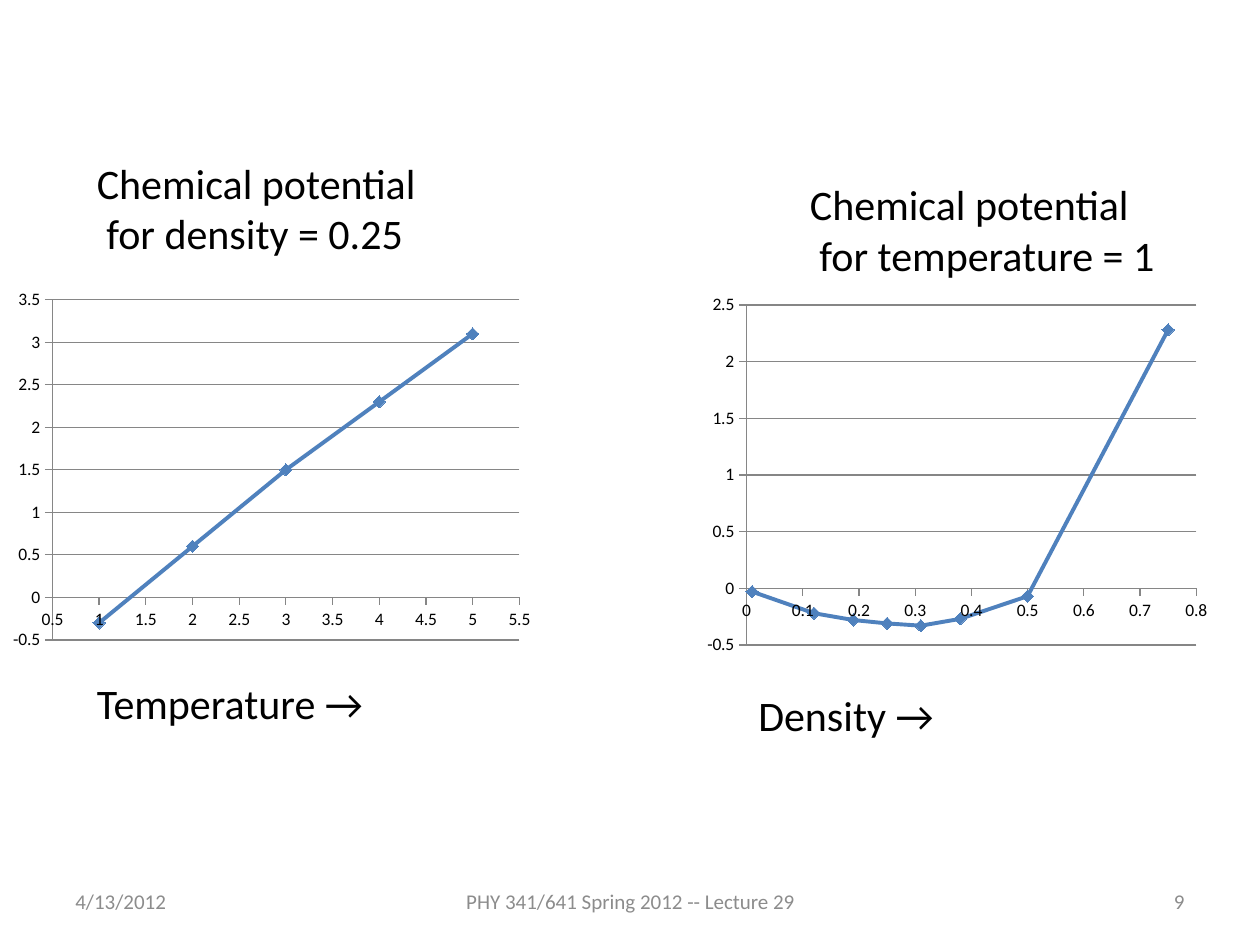
import lxml.etree
import pptx
import pptx.chart.data
import pptx.dml.color
import pptx.enum.chart
import pptx.enum.text
import pptx.oxml
import pptx.oxml.ns
import pptx.util

Inches, Pt = pptx.util.Inches, pptx.util.Pt
ALIGN = pptx.enum.text.PP_ALIGN
ANCHOR = pptx.enum.text.MSO_ANCHOR
COLORS = {"text": "000000", "footer": "8C8C8C", "series": "4F81BD", "axis": "868686"}


def rgb(name):
    return pptx.dml.color.RGBColor.from_string(COLORS[name])


class SlideBuilder:
    font = "Calibri"

    def __init__(self, slide):
        self.slide = slide

    def text(self, box, lines, size=24, color="text", align=ALIGN.LEFT, anchor=ANCHOR.TOP):
        sp = self.slide.shapes.add_textbox(*map(Inches, box))
        tf = sp.text_frame
        tf.word_wrap = True
        tf.vertical_anchor = anchor
        for i, line in enumerate(lines):
            p = tf.add_paragraph() if i else tf.paragraphs[0]
            p.alignment = align
            r = p.add_run()
            r.text = line
            r.font.name, r.font.size = self.font, Pt(size)
            r.font.color.rgb = rgb(color)

    def scatter(self, box, plot, points, x_scale, y_scale):
        """Draw a smooth scatter; each scale is (minimum, maximum, major unit)."""
        data = pptx.chart.data.XyChartData()
        series = data.add_series("Series 1")
        for x, y in points:
            series.add_data_point(x, y)
        kind = pptx.enum.chart.XL_CHART_TYPE.XY_SCATTER_SMOOTH
        chart = self.slide.shapes.add_chart(kind, *map(Inches, box), data).chart
        chart.has_legend = chart.has_title = False
        chart.font.name, chart.font.size = self.font, Pt(10)
        chart.font.color.rgb = rgb("text")
        chart.plots[0].vary_by_categories = False
        self.style_axis(chart.category_axis, x_scale, grid=False)
        self.style_axis(chart.value_axis, y_scale, grid=True)
        self.style_series(chart.plots[0].series[0])
        self.place_plot(chart, plot)

    def style_axis(self, axis, scale, grid):
        axis.minimum_scale, axis.maximum_scale, axis.major_unit = scale
        axis.major_tick_mark = pptx.enum.chart.XL_TICK_MARK.OUTSIDE
        axis.minor_tick_mark = pptx.enum.chart.XL_TICK_MARK.NONE
        axis.tick_labels.number_format = "General"
        axis.tick_labels.number_format_is_linked = False
        axis.has_major_gridlines = grid
        lines = [axis.format.line]
        if grid:
            lines.append(axis.major_gridlines.format.line)
        for line in lines:
            line.color.rgb, line.width = rgb("axis"), Pt(0.75)

    def style_series(self, series):
        series.smooth = True
        series.format.line.color.rgb = rgb("series")
        series.format.line.width = Pt(2.25)
        marker = series.marker
        marker.style = pptx.enum.chart.XL_MARKER_STYLE.DIAMOND
        marker.size = 7
        marker.format.fill.solid()
        marker.format.fill.fore_color.rgb = rgb("series")
        marker.format.line.color.rgb = rgb("series")

    def place_plot(self, chart, plot):
        """Fix the inner plot area, given as fractions of the chart."""
        qn = pptx.oxml.ns.qn
        area = chart.element.find(".//" + qn("c:plotArea"))
        for old in area.findall(qn("c:layout")):
            area.remove(old)
        layout = lxml.etree.Element(qn("c:layout"))
        manual = lxml.etree.SubElement(layout, qn("c:manualLayout"))
        settings = [("layoutTarget", "inner"), ("xMode", "edge"), ("yMode", "edge")]
        for tag, value in settings + list(zip("xywh", plot)):
            lxml.etree.SubElement(manual, qn("c:" + tag)).set("val", str(value))
        area.insert(0, layout)


def main():
    prs = pptx.Presentation()
    prs.slide_width, prs.slide_height = Inches(10), Inches(7.5)
    s = SlideBuilder(prs.slides.add_slide(prs.slide_layouts[6]))

    footers = [
        (0.5, 2.33, "4/13/2012", ALIGN.LEFT),
        (3.42, 3.17, "PHY 341/641 Spring 2012 -- Lecture 29", ALIGN.CENTER),
        (7.17, 2.33, "9", ALIGN.RIGHT),
    ]
    for left, width, words, align in footers:
        s.text((left, 6.95, width, 0.4), [words], 12, "footer", align, ANCHOR.MIDDLE)

    by_temperature = zip([1, 2, 3, 4, 5], [-0.3, 0.6, 1.5, 2.3, 3.1])
    s.scatter((-0.01, 2.17, 4.26, 3), (0.1, 0.07, 0.87, 0.9),
              by_temperature, (0.5, 5.5, 0.5), (-0.5, 3.5, 0.5))
    s.text((0.67, 1.2, 2.83, 0.91), ["Chemical potential", " for density = 0.25"])
    s.text((0.67, 5.33, 3.83, 0.5), ["Temperature →"])

    by_density = zip([0.01, 0.12, 0.19, 0.25, 0.31, 0.38, 0.5, 0.75],
                     [-0.03, -0.22, -0.28, -0.31, -0.33, -0.27, -0.07, 2.28])
    s.scatter((5.5, 2.33, 4.25, 3), (0.1, 0.03, 0.84, 0.9),
              by_density, (0, 0.8, 0.1), (-0.5, 2.5, 0.5))
    s.text((6.33, 1.37, 3.08, 0.91), ["Chemical potential", " for temperature = 1"])
    s.text((5.92, 5.42, 3.83, 0.5), ["Density →"])

    prs.save("out.pptx")


if __name__ == "__main__":
    main()
